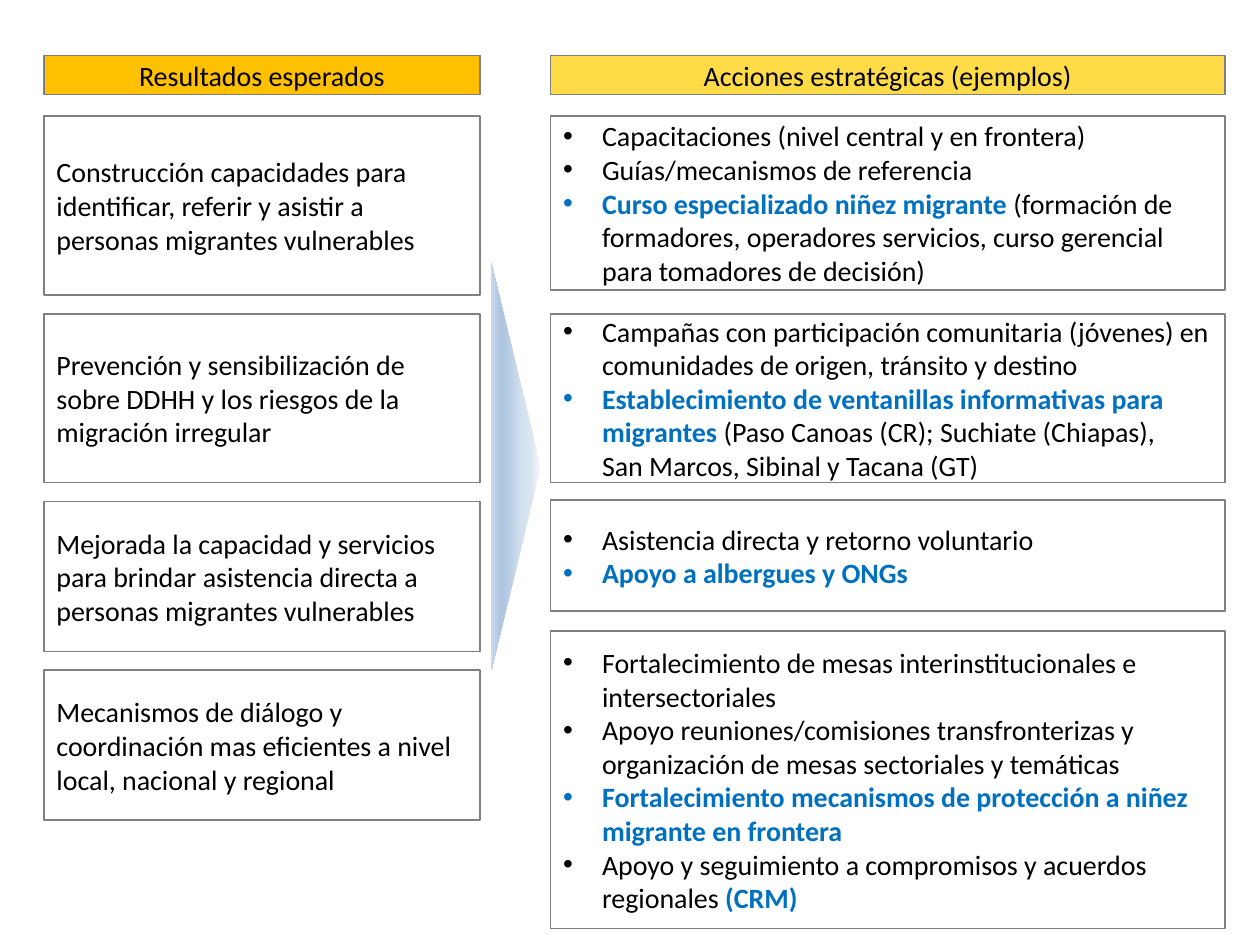
from lxml.etree import SubElement
from pptx import Presentation
from pptx.dml.color import RGBColor
from pptx.enum.shapes import MSO_SHAPE as Preset
from pptx.enum.text import MSO_ANCHOR as Anchor, PP_ALIGN as Align
from pptx.oxml import parse_xml
from pptx.oxml.ns import nsdecls, qn
from pptx.util import Inches, Pt

# Two columns: left edge and width
RESULTS = (0.35, 3.46)
ACTIONS = (4.37, 5.35)
HEADER_ROW = (0.44, 0.31)
INDENT = 0.31

BLACK, BLUE, GRAY = "000000", "0070C0", "808080"
FONT = {"name": "Calibri", "size": Pt(16)}

HEADERS = [
    (RESULTS, "FFC000", "Resultados esperados"),
    (ACTIONS, "FFDC47", "Acciones estratégicas (ejemplos)"),
]

# Rows as (top, height), then the text
RESULT_ROWS = [
    ((0.92, 1.42), "Construcción capacidades para identificar, referir y asistir a "
                   "personas migrantes vulnerables"),
    ((2.49, 1.34), "Prevención y sensibilización de sobre DDHH y los riesgos de la "
                   "migración irregular"),
    ((3.98, 1.19), "Mejorada la capacidad y servicios para brindar asistencia directa a "
                   "personas migrantes vulnerables"),
    ((5.32, 1.19), "Mecanismos de diálogo y coordinación mas eficientes a nivel local, "
                   "nacional y regional"),
]

# Each bullet is a list of parts; a part marked with * is highlighted
ACTION_ROWS = [
    ((0.92, 1.38), [
        ["Capacitaciones (nivel central y en frontera)"],
        ["Guías/mecanismos de referencia"],
        ["*Curso especializado niñez migrante ",
         "(formación de formadores, operadores servicios, curso gerencial "
         "para tomadores de decisión)"],
    ]),
    ((2.49, 1.34), [
        ["Campañas con participación comunitaria (jóvenes) en comunidades de origen, "
         "tránsito y destino"],
        ["*Establecimiento de ventanillas informativas para migrantes ",
         "(Paso Canoas (CR); Suchiate (Chiapas),\nSan Marcos, Sibinal y Tacana (GT)"],
    ]),
    ((3.97, 0.88), [
        ["Asistencia directa y retorno voluntario"],
        ["*Apoyo a albergues y ONGs"],
    ]),
    ((5.01, 2.36), [
        ["Fortalecimiento de mesas interinstitucionales e intersectoriales"],
        ["Apoyo reuniones/comisiones transfronterizas y organización de mesas "
         "sectoriales y temáticas"],
        ["*Fortalecimiento mecanismos de protección a niñez migrante en frontera"],
        ["Apoyo y seguimiento a compromisos y acuerdos regionales ", "*(CRM)"],
    ]),
]

# Arrow gradient: position in percent and colour
ARROW_STOPS = [(0, "F6F9FC"), (18, "DCE6F2"), (37, "D3E0EF"),
               (74, "B0C6E1"), (83, "B0C6E1"), (100, "CAD9EB")]


def color(hex_string):
    return RGBColor.from_string(hex_string)


def add_bullet(paragraph):
    properties = paragraph._p.get_or_add_pPr()
    properties.set("marL", str(Inches(INDENT)))
    properties.set("indent", str(-Inches(INDENT)))
    SubElement(properties, qn("a:buFont"), typeface="Arial")
    SubElement(properties, qn("a:buChar"), char="•")


def add_part(paragraph, part):
    highlighted = part.startswith("*")
    for index, line in enumerate(part.lstrip("*").split("\n")):
        if index:
            paragraph.add_line_break()
        run = paragraph.add_run()
        run.text = line
        for name, value in (FONT | {"bold": highlighted}).items():
            setattr(run.font, name, value)
        run.font.color.rgb = color(BLUE if highlighted else BLACK)


def add_box(slide, column, row, paragraphs, fill=None, align=Align.LEFT, bullets=False):
    (left, width), (top, height) = column, row
    shape = slide.shapes.add_shape(
        Preset.RECTANGLE, *map(Inches, (left, top, width, height)))
    shape.shadow.inherit = False
    shape.line.color.rgb = color(GRAY)
    shape.line.width = Pt(1)
    if fill:
        shape.fill.solid()
        shape.fill.fore_color.rgb = color(fill)
    else:
        shape.fill.background()

    frame = shape.text_frame
    frame.word_wrap = True
    frame.vertical_anchor = Anchor.MIDDLE
    for index, parts in enumerate(paragraphs):
        paragraph = frame.add_paragraph() if index else frame.paragraphs[0]
        paragraph.alignment = align
        if bullets:
            add_bullet(paragraph)
        for part in parts:
            add_part(paragraph, part)


def add_arrow(slide):
    shape = slide.shapes.add_shape(
        Preset.ISOSCELES_TRIANGLE, *map(Inches, (2.48, 3.51, 3.23, 0.39)))
    shape.rotation = 90
    shape.shadow.inherit = False
    shape.line.fill.background()
    stops = "".join(
        f'<a:gs pos="{position * 1000}"><a:srgbClr val="{value}"/></a:gs>'
        for position, value in ARROW_STOPS)
    gradient = parse_xml(
        f'<a:gradFill {nsdecls("a")} rotWithShape="1"><a:gsLst>{stops}</a:gsLst>'
        '<a:lin ang="5400000" scaled="0"/></a:gradFill>')
    shape._element.spPr.find(qn("a:prstGeom")).addnext(gradient)


def main():
    presentation = Presentation()
    presentation.slide_width, presentation.slide_height = Inches(10), Inches(7.5)
    slide = presentation.slides.add_slide(presentation.slide_layouts[6])

    # Column headers
    for column, fill, text in HEADERS:
        add_box(slide, column, HEADER_ROW, [[text]], fill, Align.CENTER)

    # Expected results, arrow, strategic actions
    for row, text in RESULT_ROWS:
        add_box(slide, RESULTS, row, [[text]])
    add_arrow(slide)
    for row, bullets in ACTION_ROWS:
        add_box(slide, ACTIONS, row, bullets, bullets=True)

    presentation.save("out.pptx")


if __name__ == "__main__":
    main()
